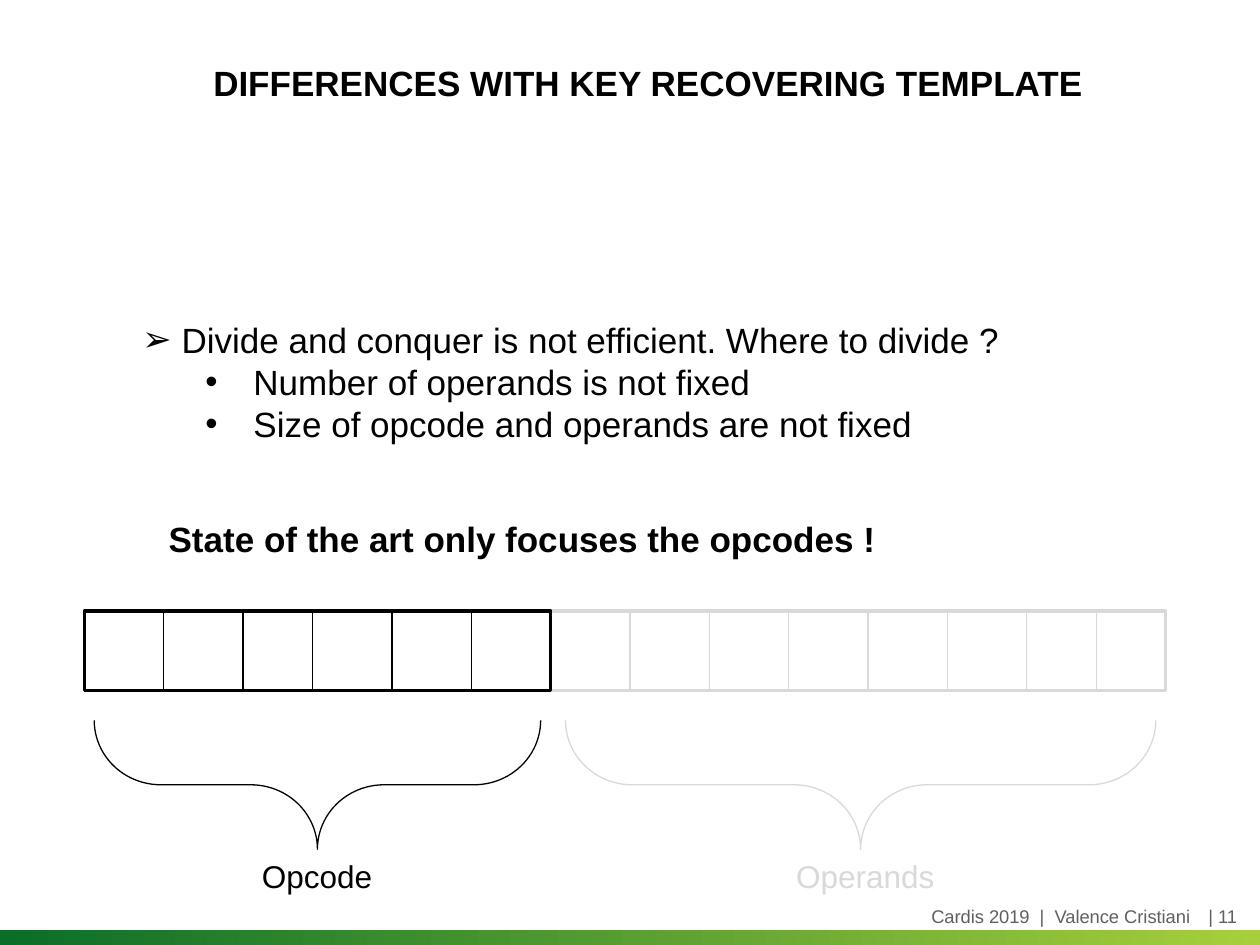
import itertools
import pptx
import pptx.dml.color
import pptx.enum.shapes
import pptx.enum.text
import pptx.util
from lxml import etree
from pptx.oxml.ns import qn

Cm = pptx.util.Cm
Pt = pptx.util.Pt
SHAPES = pptx.enum.shapes.MSO_SHAPE
ALIGN = pptx.enum.text.PP_ALIGN
ANCHOR = pptx.enum.text.MSO_ANCHOR

BLACK, PALE, GREY = "000000", "D9D9D9", "5F5F5F"
TITLE = "DIFFERENCES WITH KEY RECOVERING TEMPLATE"
POINTS = [
    ("Divide and conquer is not efficient. Where to divide ?", 0, "➢", 0.79, 0.79),
    ("Number of operands is not fixed", 1, "•", 2.24, 0.97),
    ("Size of opcode and operands are not fixed", 1, "•", 2.24, 0.97),
]
CLAIM = "State of the art only focuses the opcodes !"
FOOTER = "Cardis 2019  |  Valence Cristiani"
PAGE = "| 11"
FIELDS = [
    {"name": "Operands", "color": PALE, "left": 11.1, "cells": [1.6] * 6 + [1.4] * 2,
     "brace": (11.4, 23.3), "label": (15.8, 3.33)},
    {"name": "Opcode", "color": BLACK, "left": 1.7, "cells": [1.6, 1.6, 1.4, 1.6, 1.6, 1.6],
     "brace": (1.9, 10.9), "label": (5.03, 2.77)},
]
ROW_TOP, ROW_HEIGHT = 12.32, 1.6
BRACE_TOP, BRACE_HEIGHT = 14.52, 2.6
LABEL_TOP = 17.15

presentation = pptx.Presentation()
presentation.slide_width, presentation.slide_height = Cm(25.4), Cm(19.05)
slide = presentation.slides.add_slide(presentation.slide_layouts[6])


def rgb(color):
    return pptx.dml.color.RGBColor.from_string(color)


def add_bullet(paragraph, level, character, margin, hanging):
    paragraph.level = level
    properties = paragraph._p.get_or_add_pPr()
    properties.set("marL", str(Cm(margin)))
    properties.set("indent", str(-Cm(hanging)))
    etree.SubElement(properties, qn("a:buFont")).set("typeface", "Arial")
    etree.SubElement(properties, qn("a:buChar")).set("char", character)


def add_text(text, left, top, width, height, size=20, color=BLACK, bold=False,
             align=ALIGN.LEFT, anchor=ANCHOR.TOP, inset=True, wrap=True):
    box = slide.shapes.add_textbox(Cm(left), Cm(top), Cm(width), Cm(height))
    frame = box.text_frame
    frame.word_wrap = wrap
    frame.vertical_anchor = anchor
    if not inset:
        frame.margin_left = frame.margin_right = frame.margin_top = frame.margin_bottom = 0
    items = [(text,)] if isinstance(text, str) else text
    for index, (words, *bullet) in enumerate(items):
        paragraph = frame.add_paragraph() if index else frame.paragraphs[0]
        if bullet:
            add_bullet(paragraph, *bullet)
        paragraph.alignment = align
        run = paragraph.add_run()
        run.text = words
        run.font.name, run.font.size, run.font.bold = "Arial", Pt(size), bold
        run.font.color.rgb = rgb(color)


def add_outline(kind, left, top, width, height, color, weight):
    shape = slide.shapes.add_shape(kind, Cm(left), Cm(top), Cm(width), Cm(height))
    shape.shadow.inherit = False
    shape.fill.background()
    shape.line.color.rgb = rgb(color)
    shape.line.width = Pt(weight)
    return shape


def add_divider(x, color):
    line = slide.shapes.add_connector(pptx.enum.shapes.MSO_CONNECTOR.STRAIGHT,
                                      Cm(x), Cm(ROW_TOP), Cm(x), Cm(ROW_TOP + ROW_HEIGHT))
    line.line.color.rgb = rgb(color)
    line.line.width = Pt(0.75)
    etree.SubElement(line._element.spPr, qn("a:effectLst"))


def add_brace(start, end, color):
    span = end - start
    center_x, center_y = (start + end) / 2, BRACE_TOP + BRACE_HEIGHT / 2
    brace = add_outline(SHAPES.LEFT_BRACE, center_x - BRACE_HEIGHT / 2, center_y - span / 2,
                        BRACE_HEIGHT, span, color, 0.75)
    brace.rotation = 270
    brace.adjustments[0] = 0.517


def add_field(field):
    color, cells = field["color"], field["cells"]
    for offset in itertools.accumulate(cells[:-1]):
        add_divider(field["left"] + offset, color)
    add_outline(SHAPES.RECTANGLE, field["left"], ROW_TOP, sum(cells), ROW_HEIGHT, color, 2)
    add_brace(*field["brace"], color)
    label_left, label_width = field["label"]
    add_text(field["name"], label_left, LABEL_TOP, label_width, 1.02,
             size=18, color=color, wrap=False)


band = slide.shapes.add_shape(SHAPES.RECTANGLE, 0, Cm(18.75), Cm(25.4), Cm(0.3))
band.shadow.inherit = False
band.line.fill.background()
band.fill.gradient()
band.fill.gradient_angle = 0
for stop, color in zip(band.fill.gradient_stops, ("0A6E28", "A7CF3B")):
    stop.color.rgb = rgb(color)

small = {"size": 10.5, "color": GREY, "anchor": ANCHOR.MIDDLE, "inset": False}
add_text(PAGE, 24.36, 18.24, 1.04, 0.46, **small)
add_text(FOOTER, 0, 18.24, 24, 0.46, align=ALIGN.RIGHT, **small)
add_text(TITLE, 1.7, 0.53, 22.73, 2.26, bold=True, align=ALIGN.CENTER,
         anchor=ANCHOR.MIDDLE, inset=False)
add_text(POINTS, 2.62, 6.3, 17.91, 2.82, wrap=False)
add_text(CLAIM, 3.15, 10.31, 22.17, 1.12, bold=True)
for field in FIELDS:
    add_field(field)

presentation.save("out.pptx")
